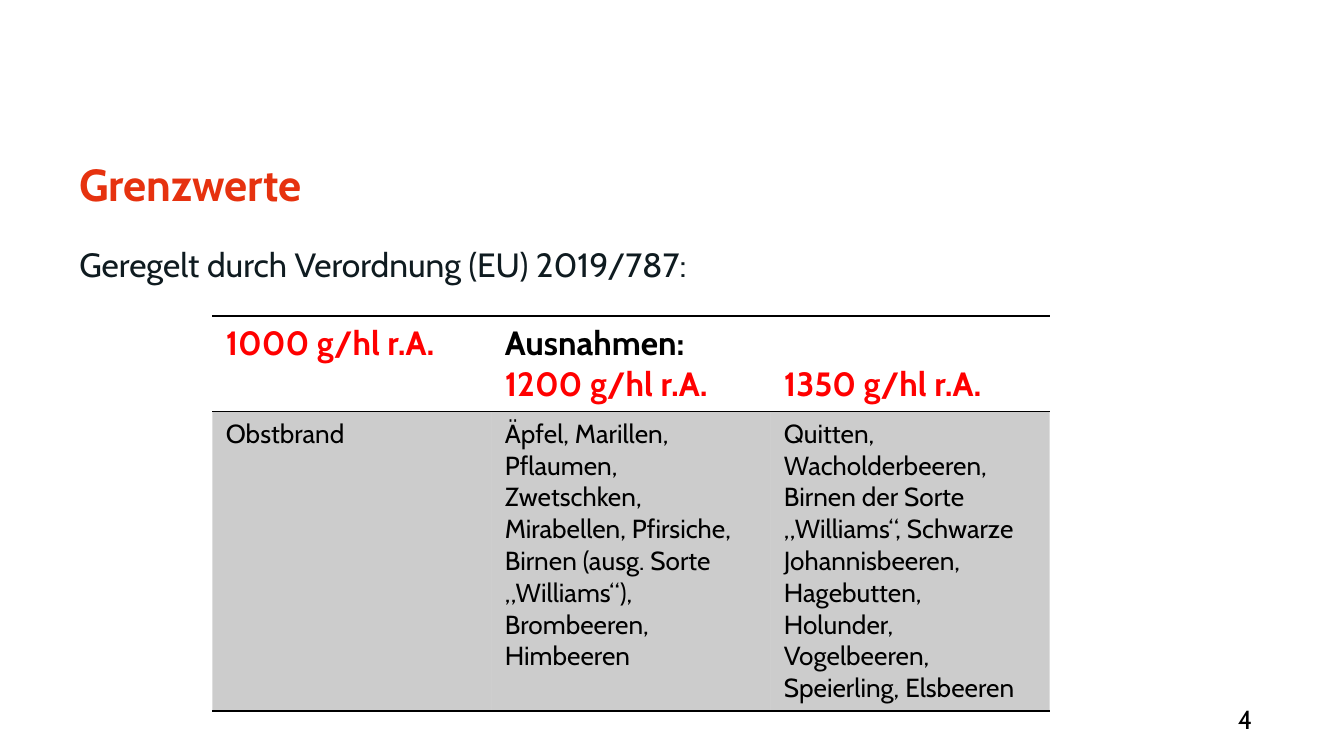
from dataclasses import dataclass

from lxml.etree import SubElement
from pptx import Presentation
from pptx.dml.color import RGBColor
from pptx.enum.text import MSO_ANCHOR, MSO_AUTO_SIZE, PP_ALIGN
from pptx.oxml.ns import qn
from pptx.util import Inches, Pt


@dataclass(frozen=True)
class Theme:
    font: str = "Cabin"
    accent: str = "E6320F"
    ink: str = "0F1B20"
    black: str = "000000"
    limit: str = "FF0000"
    title_size: int = 24
    lead_size: int = 18
    small_size: int = 14
    rule_width: int = 1
    shade_percent: int = 20


THEME = Theme()

TITLE = "Grenzwerte"
LEAD = "Geregelt durch Verordnung (EU) 2019/787:"
PAGE_NUMBER = "4"
# Each header is a list of (text, colour) lines.
HEADERS = [
    [("1000 g/hl r.A.", THEME.limit)],
    [("Ausnahmen:", THEME.black), ("1200 g/hl r.A.", THEME.limit)],
    [("1350 g/hl r.A.", THEME.limit)],
]
HEADER_ANCHORS = [MSO_ANCHOR.TOP, MSO_ANCHOR.TOP, MSO_ANCHOR.BOTTOM]
FRUITS = [
    "Obstbrand",
    "Äpfel, Marillen, Pflaumen, Zwetschken, Mirabellen, Pfirsiche, "
    "Birnen (ausg. Sorte „Williams“), Brombeeren, Himbeeren",
    "Quitten, Wacholderbeeren, Birnen der Sorte „Williams“, Schwarze "
    "Johannisbeeren, Hagebutten, Holunder, Vogelbeeren, Speierling, Elsbeeren",
]

PAGE_WIDTH = 10
PAGE_HEIGHT = PAGE_WIDTH * 9 / 16
MARGIN_LEFT, CONTENT_WIDTH = 0.59, 8.73
CONTENT_RIGHT = MARGIN_LEFT + CONTENT_WIDTH
NUMBER_WIDTH = 0.89
TABLE_LEFT, TABLE_TOP, TABLE_WIDTH = 1.58, 2.35, 6.23
COLUMN_WIDTH = TABLE_WIDTH / len(HEADERS)
ROW_HEIGHTS = [0.71, 2.23]


def add_span(para, text, size, color, bold=False):
    span = para.add_run()
    span.text = text
    span.font.name = THEME.font
    span.font.size = Pt(size)
    span.font.bold = bold
    span.font.color.rgb = RGBColor.from_string(color)


def place_box(box, left, top, width, height, anchor=MSO_ANCHOR.TOP, wrap=True):
    """Position a text shape, drop its insets and return its first paragraph."""
    box.left, box.top = Inches(left), Inches(top)
    box.width, box.height = Inches(width), Inches(height)
    frame = box.text_frame
    frame.margin_left = frame.margin_top = frame.margin_right = frame.margin_bottom = 0
    frame.auto_size = MSO_AUTO_SIZE.NONE
    frame.word_wrap = wrap
    frame.vertical_anchor = anchor
    return frame.paragraphs[0]


def rule_cell(cell, sides):
    """Draw black rules on the given sides and clear the others."""
    properties = cell._tc.get_or_add_tcPr()
    for side in "LRTB":
        line = SubElement(properties, qn(f"a:ln{side}"), w=str(Pt(THEME.rule_width)))
        if side in sides:
            fill = SubElement(line, qn("a:solidFill"))
            SubElement(fill, qn("a:srgbClr"), val=THEME.black)
        else:
            SubElement(line, qn("a:noFill"))


def shade_cell(cell):
    cell.fill.solid()
    cell.fill.fore_color.rgb = RGBColor.from_string(THEME.black)
    color = cell._tc.tcPr.find(qn("a:solidFill")).find(qn("a:srgbClr"))
    SubElement(color, qn("a:alpha"), val=str(THEME.shade_percent * 1000))


def add_limits_table(page):
    table = page.shapes.add_table(
        len(ROW_HEIGHTS), len(HEADERS), Inches(TABLE_LEFT), Inches(TABLE_TOP),
        Inches(TABLE_WIDTH), Inches(sum(ROW_HEIGHTS)),
    ).table
    table.first_row = table.horz_banding = False
    for row, height in zip(table.rows, ROW_HEIGHTS):
        row.height = Inches(height)
    for index, (lines, anchor, fruit) in enumerate(zip(HEADERS, HEADER_ANCHORS, FRUITS)):
        table.columns[index].width = Inches(COLUMN_WIDTH)
        header, body = table.cell(0, index), table.cell(1, index)
        for cell in (header, body):
            rule_cell(cell, "TB")
        header.fill.background()
        header.vertical_anchor = anchor
        shade_cell(body)
        frame = header.text_frame
        for number, (text, color) in enumerate(lines):
            para = frame.add_paragraph() if number else frame.paragraphs[0]
            add_span(para, text, THEME.lead_size, color, bold=True)
        add_span(body.text_frame.paragraphs[0], fruit, THEME.small_size, THEME.black)


def main():
    deck = Presentation()
    deck.slide_width, deck.slide_height = Inches(PAGE_WIDTH), Inches(PAGE_HEIGHT)
    page = deck.slides.add_slide(deck.slide_layouts[1])

    para = place_box(page.shapes.title, MARGIN_LEFT, 1.15, CONTENT_WIDTH, 0.68, wrap=False)
    para.alignment = PP_ALIGN.LEFT
    para.line_spacing = Pt(30)
    add_span(para, TITLE, THEME.title_size, THEME.accent, bold=True)

    para = place_box(page.placeholders[1], MARGIN_LEFT, 1.78, CONTENT_WIDTH, 3.26)
    properties = para._p.get_or_add_pPr()
    properties.set("marL", "0")
    properties.set("indent", "0")
    SubElement(properties, qn("a:buNone"))
    para.line_spacing = Pt(24)
    para.space_before = Pt(0)
    para.space_after = Pt(14.2)
    add_span(para, LEAD, THEME.lead_size, THEME.ink)

    number_box = page.shapes.add_textbox(0, 0, 0, 0)
    para = place_box(number_box, CONTENT_RIGHT - NUMBER_WIDTH, 5.24, NUMBER_WIDTH, 0.22,
                     anchor=MSO_ANCHOR.MIDDLE)
    para.alignment = PP_ALIGN.RIGHT
    add_span(para, PAGE_NUMBER, THEME.small_size, THEME.black)

    add_limits_table(page)
    deck.save("out.pptx")


if __name__ == "__main__":
    main()
